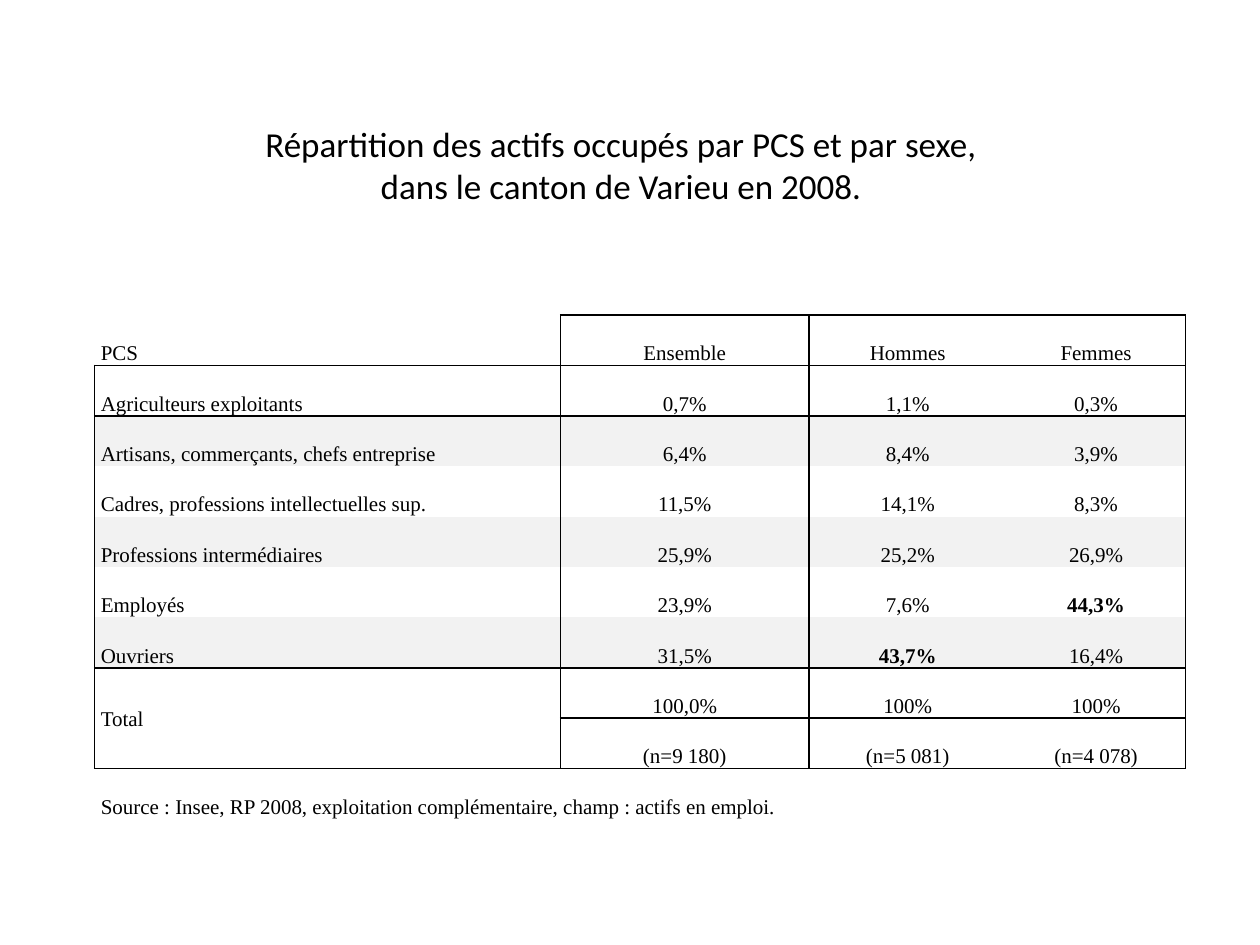
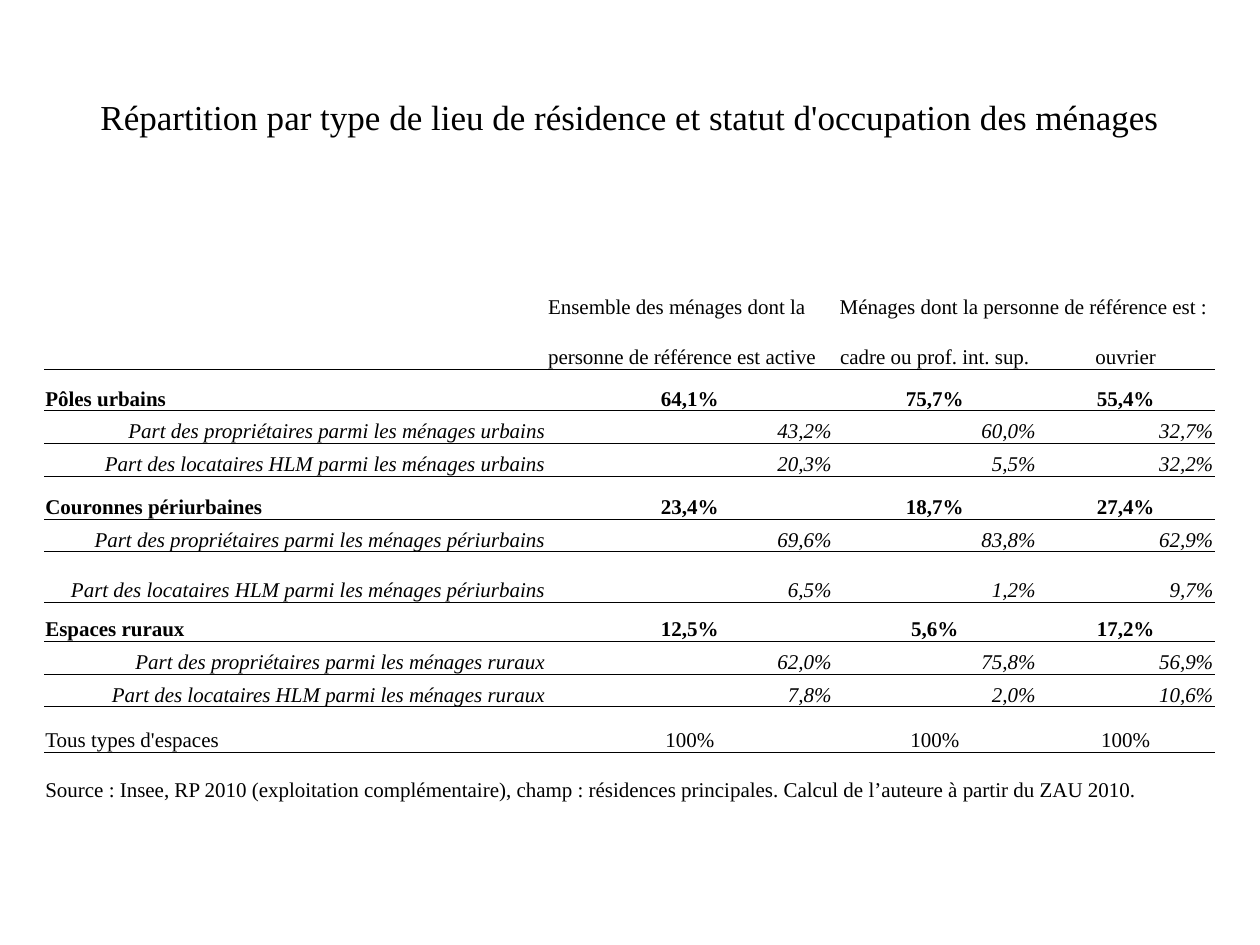
import pptx
import pptx.dml.color
import pptx.enum.text
import pptx.oxml
import pptx.oxml.ns
import pptx.util
from lxml import etree

PX = 9144
SERIF = "Times New Roman"
BLACK = "000000"
BAND = "F2F2F2"
PLAIN_STYLE = "{2D5ABB26-0587-4C30-8999-92F81FD0307C}"
ALIGN = pptx.enum.text.PP_ALIGN
ANCHOR = pptx.enum.text.MSO_ANCHOR
color = pptx.dml.color.RGBColor.from_string
qn = pptx.oxml.ns.qn


def add_titled_table(title_lines, title_font, title_at, table_at, widths, heights):
    slide = deck.slides.add_slide(deck.slide_layouts[6])
    left, top = title_at
    title = slide.shapes.add_textbox(left * PX, top * PX, 900 * PX, 125 * PX).text_frame
    title.word_wrap = True
    title.vertical_anchor = ANCHOR.MIDDLE
    paragraph = title.paragraphs[0]
    paragraph.alignment = ALIGN.CENTER
    for number, line in enumerate(title_lines):
        if number:
            paragraph.add_line_break()
        run = paragraph.add_run()
        run.text = line
        run.font.size = pptx.util.Pt(20)
        run.font.name = title_font
        run.font.color.rgb = color(BLACK)

    left, top = table_at
    frame = slide.shapes.add_table(len(heights), len(widths), left * PX, top * PX,
                                   sum(widths) * PX, sum(heights) * PX)
    table = frame.table
    table.first_row = table.horz_banding = False
    for style in frame.element.iter(qn("a:tableStyleId")):
        style.text = PLAIN_STYLE
    for column, width in zip(table.columns, widths):
        column.width = width * PX
    for row, height in zip(table.rows, heights):
        row.height = height * PX
    return table


def fill_cell(cell, text, align, sides, line_width, margin,
              fill=None, bold=False, italic=False, spacing=None):
    cell.margin_left = cell.margin_right = margin * PX
    cell.margin_top = cell.margin_bottom = 0
    cell.vertical_anchor = ANCHOR.BOTTOM
    paragraph = cell.text_frame.paragraphs[0]
    paragraph.alignment = align
    if spacing:
        paragraph.line_spacing = spacing
    if text:
        run = paragraph.add_run()
        run.text = text
        run.font.size = pptx.util.Pt(12)
        run.font.name = SERIF
        run.font.color.rgb = color(BLACK)
        run.font.bold = bold
        run.font.italic = italic
    else:
        text_body = cell.text_frame.paragraphs[0].runs
        for element in cell.text_frame._txBody.iter(qn("a:p")):
            etree.SubElement(element, qn("a:endParaRPr"), sz="1200")
    properties = next(cell.text_frame._txBody.getparent().iter(qn("a:tcPr")))
    for side in "LRTB":
        if side in sides:
            edge = etree.SubElement(properties, qn(f"a:ln{side}"), w=str(pptx.util.Pt(line_width)))
            paint = etree.SubElement(edge, qn("a:solidFill"))
            etree.SubElement(paint, qn("a:srgbClr"), val=BLACK)
    if fill:
        cell.fill.solid()
        cell.fill.fore_color.rgb = color(fill)
    else:
        cell.fill.background()


deck = pptx.Presentation()
deck.slide_width = 1000 * PX
deck.slide_height = 750 * PX

occupations = [
    ("",),
    ("PCS", "Ensemble", "Hommes", "Femmes"),
    ("Agriculteurs exploitants", "0,7%", "1,1%", "0,3%"),
    ("Artisans, commerçants, chefs entreprise", "6,4%", "8,4%", "3,9%"),
    ("Cadres, professions intellectuelles sup.", "11,5%", "14,1%", "8,3%"),
    ("Professions intermédiaires", "25,9%", "25,2%", "26,9%"),
    ("Employés", "23,9%", "7,6%", "44,3%"),
    ("Ouvriers", "31,5%", "43,7%", "16,4%"),
    ("Total", "100,0%", "100%", "100%"),
    ("", "(n=9 180)", "(n=5 081)", "(n=4 078)"),
    ("Source : Insee, RP 2008, exploitation complémentaire, champ : actifs en emploi.",),
]
highlights = ("44,3%", "43,7%")
occupation_table = add_titled_table(
    ["Répartition des actifs occupés par PCS et par sexe,", "dans le canton de Varieu en 2008."],
    "Calibri", (43, 68), (75, 210), [370, 197, 157, 34, 108], [40] * len(occupations))

for first, last in [((0, 0), (0, 3)), ((8, 0), (9, 0)), ((10, 0), (10, 3))]:
    occupation_table.cell(*first).merge(occupation_table.cell(*last))
for r in range(1, 10):
    occupation_table.cell(r, 3).merge(occupation_table.cell(r, 4))

for r, entries in enumerate(occupations):
    for c in range(5):
        text = entries[c] if c < len(entries) else ""
        sides = ""
        if 1 <= r <= 9:
            sides += "R" if c in (0, 3, 4) else ""
            sides += "L" if c == 1 or (c == 0 and r > 1) else ""
        if r in (2, 8, 10) or (r == 1 and c > 0):
            sides += "T"
        if r in (1, 7, 9) or (r == 8 and c == 0):
            sides += "B"
        fill_cell(occupation_table.cell(r, c), text, ALIGN.CENTER if c else ALIGN.LEFT,
                  sides, 1, 5, fill=BAND if r in (3, 5, 7) else None,
                  bold=text in highlights, spacing=1.15)
occupation_table.cell(8, 0).vertical_anchor = ANCHOR.MIDDLE

households = [
    ("",),
    ("", "Ensemble des ménages dont la", "Ménages dont la personne de référence est :"),
    ("", "personne de référence est active", "cadre ou prof. int. sup.", "ouvrier"),
    ("Pôles urbains", "64,1%", "75,7%", "55,4%"),
    ("Part des propriétaires parmi les ménages urbains", "43,2%", "60,0%", "32,7%"),
    ("Part des locataires HLM parmi les ménages urbains", "20,3%", "5,5%", "32,2%"),
    ("Couronnes périurbaines", "23,4%", "18,7%", "27,4%"),
    ("Part des propriétaires parmi les ménages périurbains", "69,6%", "83,8%", "62,9%"),
    ("Part des locataires HLM parmi les ménages périurbains", "6,5%", "1,2%", "9,7%"),
    ("Espaces ruraux", "12,5%", "5,6%", "17,2%"),
    ("Part des propriétaires parmi les ménages ruraux", "62,0%", "75,8%", "56,9%"),
    ("Part des locataires HLM parmi les ménages ruraux", "7,8%", "2,0%", "10,6%"),
    ("Tous types d'espaces", "100%", "100%", "100%"),
    ("Source : Insee, RP 2010 (exploitation complémentaire), champ : résidences principales. "
     "Calcul de l’auteure à partir du ZAU 2010.",),
]
area_rows = (3, 6, 9)
ruled_rows = area_rows + (12,)
household_table = add_titled_table(
    ["Répartition par type de lieu de résidence et statut d'occupation des ménages"],
    SERIF, (50, 30), (35, 178), [399, 227, 162, 141],
    [26, 49, 40, 33, 26, 26, 34, 26, 40, 31, 26, 26, 36, 40])

for first, last in [((0, 1), (0, 3)), ((1, 2), (1, 3)), ((13, 0), (13, 3))]:
    household_table.cell(*first).merge(household_table.cell(*last))

for r, entries in enumerate(households):
    is_share = entries[0].startswith("Part")
    for c in range(4):
        if is_share:
            align = ALIGN.RIGHT
        elif c == 0 or (c == 1 and r < 3):
            align = ALIGN.LEFT
        else:
            align = ALIGN.CENTER
        sides = "T" if r in ruled_rows or r - 1 in ruled_rows else ""
        sides += "B" if r in ruled_rows or r + 1 in ruled_rows else ""
        fill_cell(household_table.cell(r, c), entries[c] if c < len(entries) else "",
                  align, sides, 0.5, 1, bold=r in area_rows, italic=is_share)

deck.save("out.pptx")
